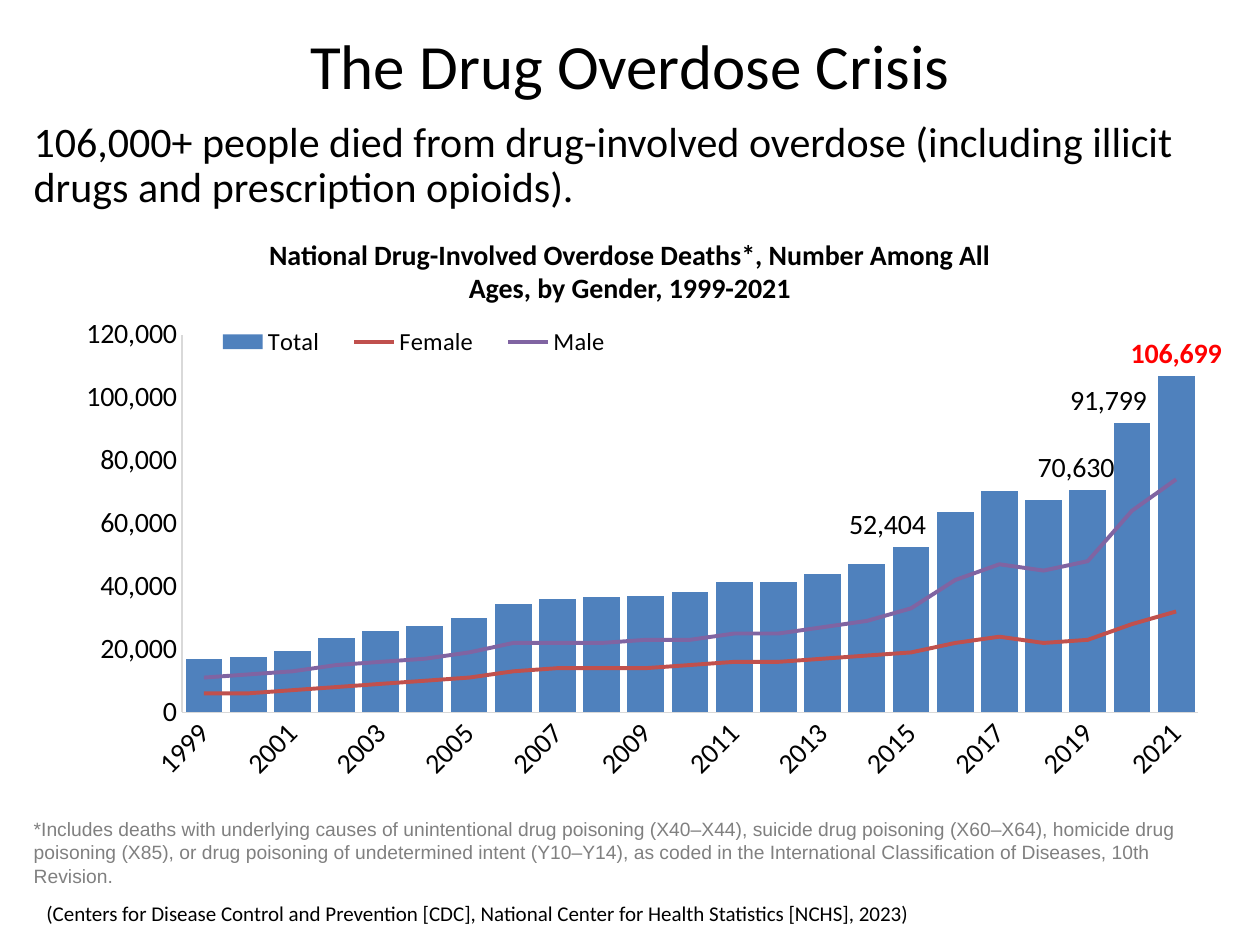
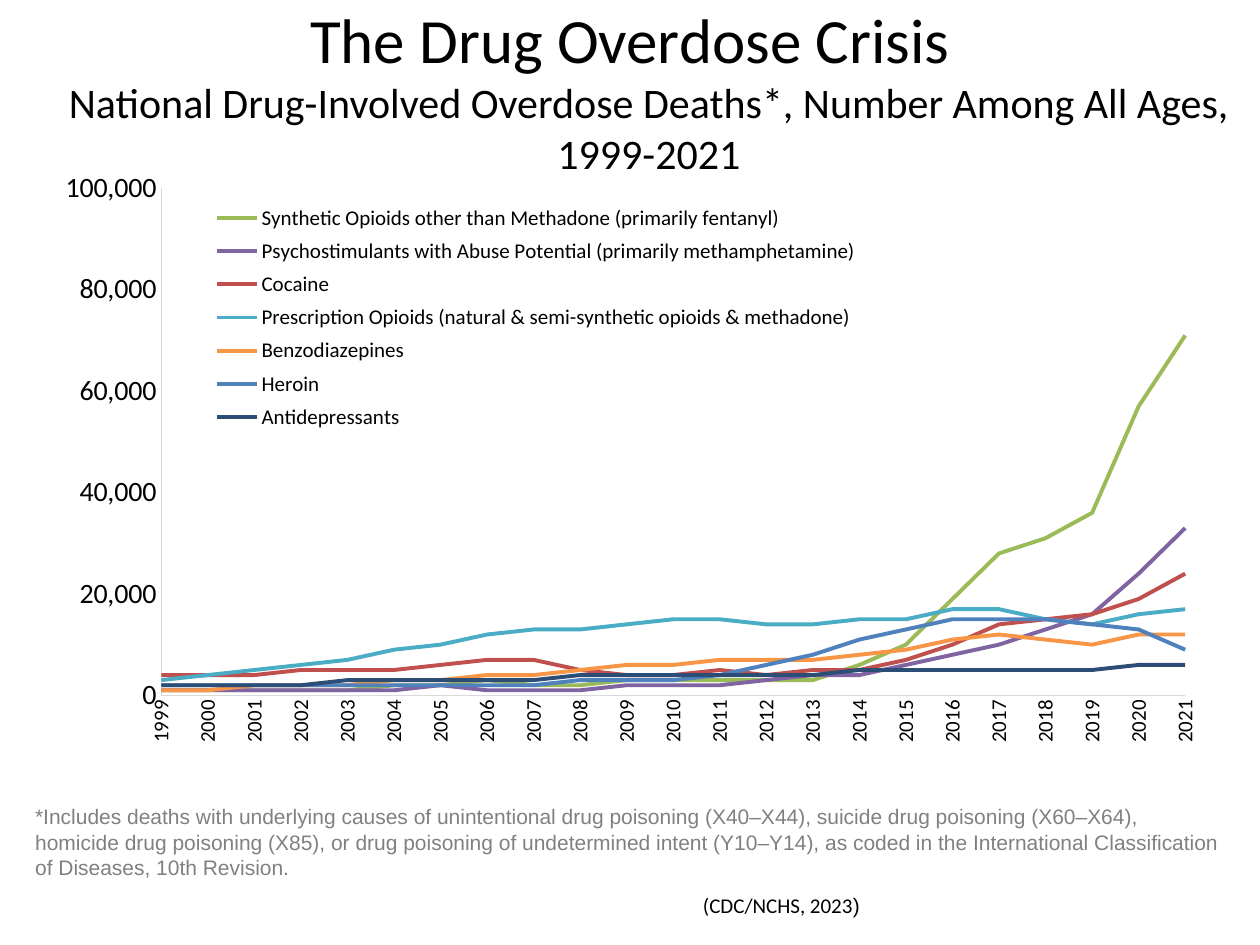
from dataclasses import dataclass

from pptx import Presentation
from pptx.chart.data import CategoryChartData
from pptx.dml.color import RGBColor
from pptx.enum.chart import XL_CHART_TYPE, XL_LABEL_POSITION, XL_LEGEND_POSITION, XL_MARKER_STYLE, XL_TICK_MARK
from pptx.enum.text import MSO_ANCHOR, PP_ALIGN
from pptx.oxml import parse_xml
from pptx.oxml.ns import nsdecls, qn
from pptx.util import Pt

COLUMNS, LINES = XL_CHART_TYPE.COLUMN_CLUSTERED, XL_CHART_TYPE.LINE
LEGEND_TOP, LEGEND_RIGHT = XL_LEGEND_POSITION.TOP, XL_LEGEND_POSITION.RIGHT
LABEL_ABOVE = XL_LABEL_POSITION.OUTSIDE_END
NO_TICK, NO_MARKER = XL_TICK_MARK.NONE, XL_MARKER_STYLE.NONE
LEFT, CENTER = PP_ALIGN.LEFT, PP_ALIGN.CENTER
TOP, MIDDLE, BOTTOM = MSO_ANCHOR.TOP, MSO_ANCHOR.MIDDLE, MSO_ANCHOR.BOTTOM


@dataclass(frozen=True)
class Theme:
    body_font: str = "Calibri"
    note_font: str = "Arial"
    black: str = "000000"
    gray: str = "808080"
    axis: str = "D9D9D9"
    alert: str = "FF0000"
    blue: str = "4F81BD"
    red: str = "C0504D"
    green: str = "9BBB59"
    purple: str = "8064A2"
    aqua: str = "4BACC6"
    orange: str = "F79646"
    navy: str = "2C4D75"
    title: int = 36
    body: int = 24
    heading: int = 16
    legend: int = 14
    small: int = 12
    tiny: int = 11
    axis_width: float = 0.75
    line_width: float = 2.25


THEME = Theme()
YEARS = [str(year) for year in range(1999, 2022)]
TITLE = "The Drug Overdose Crisis"
FOOTNOTE = (
    "*Includes deaths with underlying causes of unintentional drug poisoning (X40–X44), "
    "suicide drug poisoning (X60–X64), homicide drug poisoning (X85), or drug poisoning of "
    "undetermined intent (Y10–Y14), as coded in the International Classification of Diseases, "
    "10th Revision."
)

TOTAL_DEATHS = [
    16849, 17415, 19394, 23518, 25785, 27424, 29813, 34425, 36010, 36450, 37004, 38329,
    41340, 41502, 43982, 47055, 52404, 63632, 70237, 67367, 70630, 91799, 106699,
]
# Name, colour and yearly deaths in thousands
GENDERS = [
    ("Female", THEME.red,
     [6, 6, 7, 8, 9, 10, 11, 13, 14, 14, 14, 15, 16, 16, 17, 18, 19, 22, 24, 22, 23, 28, 32]),
    ("Male", THEME.purple,
     [11, 12, 13, 15, 16, 17, 19, 22, 22, 22, 23, 23, 25, 25, 27, 29, 33, 42, 47, 45, 48, 64, 74]),
]
DRUGS = [
    ("Synthetic Opioids other than Methadone (primarily fentanyl)", THEME.green,
     [1, 1, 1, 1, 1, 2, 2, 3, 2, 2, 3, 3, 3, 3, 3, 6, 10, 19, 28, 31, 36, 57, 71]),
    ("Psychostimulants with Abuse Potential (primarily methamphetamine)", THEME.purple,
     [1, 1, 1, 1, 1, 1, 2, 1, 1, 1, 2, 2, 2, 3, 4, 4, 6, 8, 10, 13, 16, 24, 33]),
    ("Cocaine", THEME.red,
     [4, 4, 4, 5, 5, 5, 6, 7, 7, 5, 4, 4, 5, 4, 5, 5, 7, 10, 14, 15, 16, 19, 24]),
    ("Prescription Opioids (natural & semi-synthetic opioids & methadone)", THEME.aqua,
     [3, 4, 5, 6, 7, 9, 10, 12, 13, 13, 14, 15, 15, 14, 14, 15, 15, 17, 17, 15, 14, 16, 17]),
    ("Benzodiazepines", THEME.orange,
     [1, 1, 2, 2, 2, 3, 3, 4, 4, 5, 6, 6, 7, 7, 7, 8, 9, 11, 12, 11, 10, 12, 12]),
    ("Heroin", THEME.blue,
     [2, 2, 2, 2, 2, 2, 2, 2, 2, 3, 3, 3, 4, 6, 8, 11, 13, 15, 15, 15, 14, 13, 9]),
    ("Antidepressants", THEME.navy,
     [2, 2, 2, 2, 3, 3, 3, 3, 3, 4, 4, 4, 4, 4, 4, 5, 5, 5, 5, 5, 5, 6, 6]),
]


def in_thousands(groups):
    return [(name, [value * 1000 for value in values]) for name, _, values in groups]


def style_font(font, size, color=THEME.black, name=THEME.body_font, bold=False):
    for key, value in {"size": Pt(size), "name": name, "bold": bold}.items():
        setattr(font, key, value)
    font.color.rgb = RGBColor.from_string(color)


def chart_xml(tag, content="", attributes=""):
    return parse_xml(f"<c:{tag} {nsdecls('c')} {attributes}>{content}</c:{tag}>")


def set_layout(parent, index, **settings):
    """Place a chart part by hand, as fractions of the chart's size."""
    for layout in parent.findall(qn("c:layout")):
        parent.remove(layout)
    content = "".join(f'<c:{key} val="{value}"/>' for key, value in settings.items())
    parent.insert(index, chart_xml("layout", f"<c:manualLayout>{content}</c:manualLayout>"))


def edge_frame(left, top, width, height):
    return {"xMode": "edge", "yMode": "edge", "x": left, "y": top, "w": width, "h": height}


class Deck:
    def __init__(self, theme):
        self.theme = theme
        self.deck = Presentation()
        self.deck.slide_width, self.deck.slide_height = Pt(720), Pt(540)
        self.page = None

    def add_page(self):
        self.page = self.deck.slides.add_slide(self.deck.slide_layouts[6])

    def text(self, frame, spans, size, align=LEFT, anchor=TOP, spacing=1.0, wrap=True,
             bottom=3.6, **font):
        """Add one paragraph; spans is a string or a list of (words, font name)."""
        box = self.page.shapes.add_textbox(*map(Pt, frame)).text_frame
        for key, value in {"word_wrap": wrap, "vertical_anchor": anchor,
                           "margin_bottom": Pt(bottom)}.items():
            setattr(box, key, value)
        para = box.paragraphs[0]
        para.alignment, para.line_spacing = align, spacing
        if isinstance(spans, str):
            spans = [(spans, font.pop("name", self.theme.body_font))]
        for words, name in spans:
            span = para.add_run()
            span.text = words
            style_font(span.font, size, name=name, **font)

    def title(self, top, height):
        self.text((36, top, 648, height), TITLE, self.theme.title, CENTER, BOTTOM, 0.9)

    def footnote(self, frame, size):
        self.text(frame, FOOTNOTE, size, color=self.theme.gray, name=self.theme.note_font)

    def chart(self, kind, frame, series, plot_frame, ceiling, year_size, year_angle):
        data = CategoryChartData(number_format="#,##0")
        data.categories = YEARS
        for name, values in series:
            data.add_series(name, values)
        chart = self.page.shapes.add_chart(kind, *map(Pt, frame), data).chart
        chart.has_title = False
        style_font(chart.font, self.theme.heading)
        chart.plots[0].vary_by_categories = False
        years, deaths = chart.category_axis, chart.value_axis
        for axis, size in ((years, year_size), (deaths, self.theme.heading)):
            for key, value in {"major_tick_mark": NO_TICK, "minor_tick_mark": NO_TICK,
                               "has_major_gridlines": False}.items():
                setattr(axis, key, value)
            style_font(axis.tick_labels.font, size)
            axis.format.line.color.rgb = RGBColor.from_string(self.theme.axis)
            axis.format.line.width = Pt(self.theme.axis_width)
        years._element.find(qn("c:txPr")).find(qn("a:bodyPr")).set("rot", str(year_angle * 60000))
        deaths.minimum_scale, deaths.maximum_scale, deaths.major_unit = 0, ceiling, 20000
        deaths.tick_labels.number_format = "#,##0"
        deaths.tick_labels.number_format_is_linked = False
        plot_area = chart._chartSpace.chart.plotArea
        set_layout(plot_area, 0, layoutTarget="inner", **edge_frame(*plot_frame))
        return chart

    def legend(self, chart, position, frame, size, overlay):
        chart.has_legend = True
        chart.legend.position = position
        chart.legend.include_in_layout = not overlay
        style_font(chart.legend.font, size)
        set_layout(chart.legend._element, 1, **edge_frame(*frame))

    def style_lines(self, plot, groups):
        for series, (_, color, _) in zip(plot.series, groups):
            series.smooth = False
            series.marker.style = NO_MARKER
            series.format.line.color.rgb = RGBColor.from_string(color)
            series.format.line.width = Pt(self.theme.line_width)

    def label_point(self, series, index, shift, **font):
        label = series.points[index].data_label
        style_font(label.font, self.theme.heading, **font)
        label.position = LABEL_ABOVE
        set_layout(series._element.xpath(f"c:dLbls/c:dLbl[c:idx/@val='{index}']")[0], 1, x=shift, y=0)


def columns_to_lines(chart):
    """Move every series but the first from the columns to a line plot on the same axes."""
    columns = chart.plots[0]._element
    lines = chart_xml("lineChart", '<c:grouping val="standard"/><c:varyColors val="0"/>')
    for series in columns.findall(qn("c:ser"))[1:]:
        for flag in series.findall(qn("c:invertIfNegative")):
            series.remove(flag)
        lines.append(series)
    lines.append(chart_xml("marker", attributes='val="1"'))
    for axis in columns.findall(qn("c:axId")):
        lines.append(chart_xml("axId", attributes=f'val="{axis.get("val")}"'))
    columns.addnext(lines)


def show_every_second_year(chart):
    last = chart.category_axis._element.find(qn("c:noMultiLvlLbl"))
    last.addprevious(chart_xml("tickLblSkip", attributes='val="2"'))


def start_lines_on_axis(chart):
    axis = chart.value_axis._element
    for old in axis.findall(qn("c:crossBetween")):
        axis.remove(old)
    axis.find(qn("c:crosses")).addnext(chart_xml("crossBetween", attributes='val="midCat"'))


def add_gender_page(deck):
    theme = deck.theme
    deck.add_page()
    chart = deck.chart(
        COLUMNS, (24.5, 138.2, 674, 317.5), [("Total", TOTAL_DEATHS)] + in_thousands(GENDERS),
        (0.118, 0.167, 0.863, 0.68), 120000, theme.heading, -45)
    columns_to_lines(chart)
    show_every_second_year(chart)
    columns, lines = chart.plots
    columns.gap_width, columns.overlap = 20, -2
    total = columns.series[0]
    total.format.fill.solid()
    total.format.fill.fore_color.rgb = RGBColor.from_string(theme.blue)
    total.data_labels.show_value = False
    for year, shift in (("2015", -0.02), ("2019", -0.01), ("2020", -0.02)):
        deck.label_point(total, YEARS.index(year), shift)
    deck.label_point(total, YEARS.index("2021"), 0, color=theme.alert, bold=True)
    deck.style_lines(lines, GENDERS)
    deck.legend(chart, LEGEND_TOP, (0.13, 0.15, 0.37, 0.06), theme.legend, overlay=True)

    deck.title(1.4, 61.2)
    deck.text((12.2, 65.5, 707.8, 61.2),
              "106,000+ people died from drug-involved overdose (including illicit drugs and "
              "prescription opioids).", theme.body, spacing=0.9)
    deck.footnote((12.2, 463.7, 695.5, 47.5), theme.tiny)
    deck.text((141, 130.3, 437.8, 49),
              "National Drug-Involved Overdose Deaths*, Number Among All Ages, by Gender, 1999-2021",
              theme.heading, CENTER, MIDDLE, bold=True)
    deck.text((19.4, 511.2, 654.5, 21.6),
              "(Centers for Disease Control and Prevention [CDC], National Center for Health "
              "Statistics [NCHS], 2023)", theme.small)


def add_drug_page(deck):
    theme = deck.theme
    deck.add_page()
    deck.text((31, 46.8, 679.7, 79.2),
              "National Drug-Involved Overdose Deaths*, Number Among All Ages, 1999-2021",
              theme.body, CENTER, MIDDLE, bottom=31)
    deck.title(-7.2, 54.7)
    chart = deck.chart(
        LINES, (31, 97.9, 671.8, 353.5), in_thousands(DRUGS),
        (0.091, 0.026, 0.871, 0.821), 100000, theme.small, -90)
    start_lines_on_axis(chart)
    deck.style_lines(chart.plots[0], DRUGS)
    deck.legend(chart, LEGEND_RIGHT, (0.13, 0.04, 0.56, 0.39), theme.small, overlay=False)
    deck.footnote((13, 455.8, 695.5, 65.5), theme.small)
    deck.text((394.6, 506.2, 105.1, 21.6),
              [("(CDC/NCHS, 2023", theme.body_font), (")", theme.note_font)],
              theme.small, wrap=False)


def main():
    deck = Deck(THEME)
    add_gender_page(deck)
    add_drug_page(deck)
    deck.deck.save("out.pptx")


if __name__ == "__main__":
    main()
